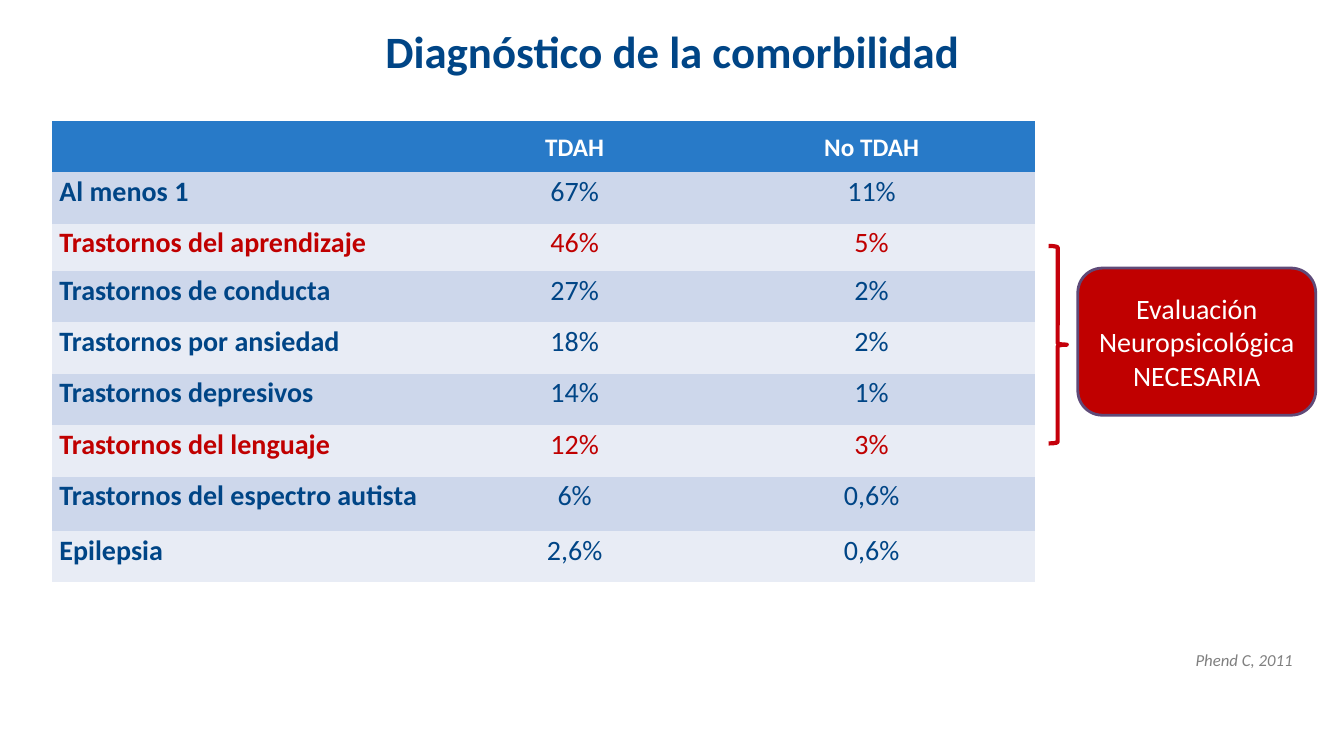
from pptx import Presentation
from pptx.dml.color import RGBColor
from pptx.enum.shapes import MSO_SHAPE as Preset
from pptx.enum.text import MSO_ANCHOR as Anchor, PP_ALIGN as Align
from pptx.util import Inches, Pt

# Content
TITLE = "Diagnóstico de la comorbilidad"
HEADER = ("", "TDAH", "No TDAH")
DISORDERS = [
    ("Al menos 1", "67%", "11%"),
    ("Trastornos del aprendizaje", "46%", "5%"),
    ("Trastornos de conducta", "27%", "2%"),
    ("Trastornos por ansiedad", "18%", "2%"),
    ("Trastornos depresivos", "14%", "1%"),
    ("Trastornos del lenguaje", "12%", "3%"),
    ("Trastornos del espectro autista", "6%", "0,6%"),
    ("Epilepsia", "2,6%", "0,6%"),
]
HIGHLIGHTED = {"Trastornos del aprendizaje", "Trastornos del lenguaje"}
CALLOUT = ["Evaluación Neuropsicológica", "NECESARIA"]
SOURCE = "Phend C, 2011"

# Look
FONT = "Calibri"
NAVY, RED, WHITE, GRAY = "004586", "C00000", "FFFFFF", "808080"
HEADER_FILL, BANDS = "287AC8", ("CDD7EB", "E8ECF5")
CALLOUT_LINE, BRACE_LINE = "5F4A78", "C5000B"
NO_GRID_STYLE = "{2D5ABB26-0587-4C30-8999-92F81FD0307C}"

# Layout in inches
TABLE_LEFT, TABLE_TOP = 0.52, 1.2
COLUMNS = (3.86, 2.64, 3.25)
ROW = 0.51
ROW_EXCEPTIONS = {2: 0.47, 7: 0.54}


def color(value):
    return RGBColor.from_string(value)


def box(left, top, width, height):
    return [Inches(length) for length in (left, top, width, height)]


def write(frame, lines, size, hue, align, bold=False, italic=False):
    frame.word_wrap = True
    frame.text = "\n".join(lines)
    for paragraph in frame.paragraphs:
        paragraph.alignment = align
        font = paragraph.font
        font.name, font.size, font.bold, font.italic = FONT, Pt(size), bold, italic
        font.color.rgb = color(hue)


def add_shape(preset, place, line, weight, fill=None):
    shape = slide.shapes.add_shape(preset, *box(*place))
    shape.shadow.inherit = False
    shape.line.color.rgb = color(line)
    shape.line.width = Pt(weight)
    if fill:
        shape.fill.solid()
        shape.fill.fore_color.rgb = color(fill)
    else:
        shape.fill.background()
    return shape


presentation = Presentation()
presentation.slide_width, presentation.slide_height = Inches(13.33), Inches(7.5)
slide = presentation.slides.add_slide(presentation.slide_layouts[6])

# Source and title
source = slide.shapes.add_textbox(*box(0.25, 6.4, 12.67, 0.32))
write(source.text_frame, [SOURCE], 12, GRAY, Align.RIGHT, italic=True)
title = slide.shapes.add_textbox(*box(0.67, 0.17, 12, 0.66))
write(title.text_frame, [TITLE], 32, NAVY, Align.CENTER, bold=True)
title.text_frame.vertical_anchor = Anchor.MIDDLE

# Comorbidity table
rows = [HEADER, *DISORDERS]
heights = [ROW_EXCEPTIONS.get(index, ROW) for index in range(len(rows))]
frame = slide.shapes.add_table(
    len(rows), len(COLUMNS), *box(TABLE_LEFT, TABLE_TOP, sum(COLUMNS), sum(heights)))
table = frame.table
table._tbl.tblPr[0].text = NO_GRID_STYLE
for column, width in zip(table.columns, COLUMNS):
    column.width = Inches(width)

for row_index, values in enumerate(rows):
    table.rows[row_index].height = Inches(heights[row_index])
    is_header = row_index == 0
    if is_header:
        fill, hue, size = HEADER_FILL, WHITE, 18
    else:
        fill, size = BANDS[(row_index - 1) % 2], 20
        hue = RED if values[0] in HIGHLIGHTED else NAVY
    for column_index, value in enumerate(values):
        cell = table.cell(row_index, column_index)
        is_label = column_index == 0
        cell.fill.solid()
        cell.fill.fore_color.rgb = color(fill)
        cell.margin_left = cell.margin_right = Inches(0.07)
        cell.margin_top = cell.margin_bottom = 0
        cell.vertical_anchor = Anchor.MIDDLE if is_header else Anchor.TOP
        write(cell.text_frame, [value], size, hue,
              Align.LEFT if is_label else Align.CENTER, bold=is_header or is_label)
        cell.text_frame.paragraphs[0].line_spacing = 1.07

# Callout and its brace
callout = add_shape(Preset.ROUNDED_RECTANGLE, (10.69, 2.66, 2.36, 1.46),
                    CALLOUT_LINE, 2, RED)
write(callout.text_frame, CALLOUT, 20, WHITE, Align.CENTER)
callout.text_frame.vertical_anchor = Anchor.MIDDLE
add_shape(Preset.RIGHT_BRACE, (10.4, 2.44, 0.18, 1.96), BRACE_LINE, 3)

presentation.save("out.pptx")
